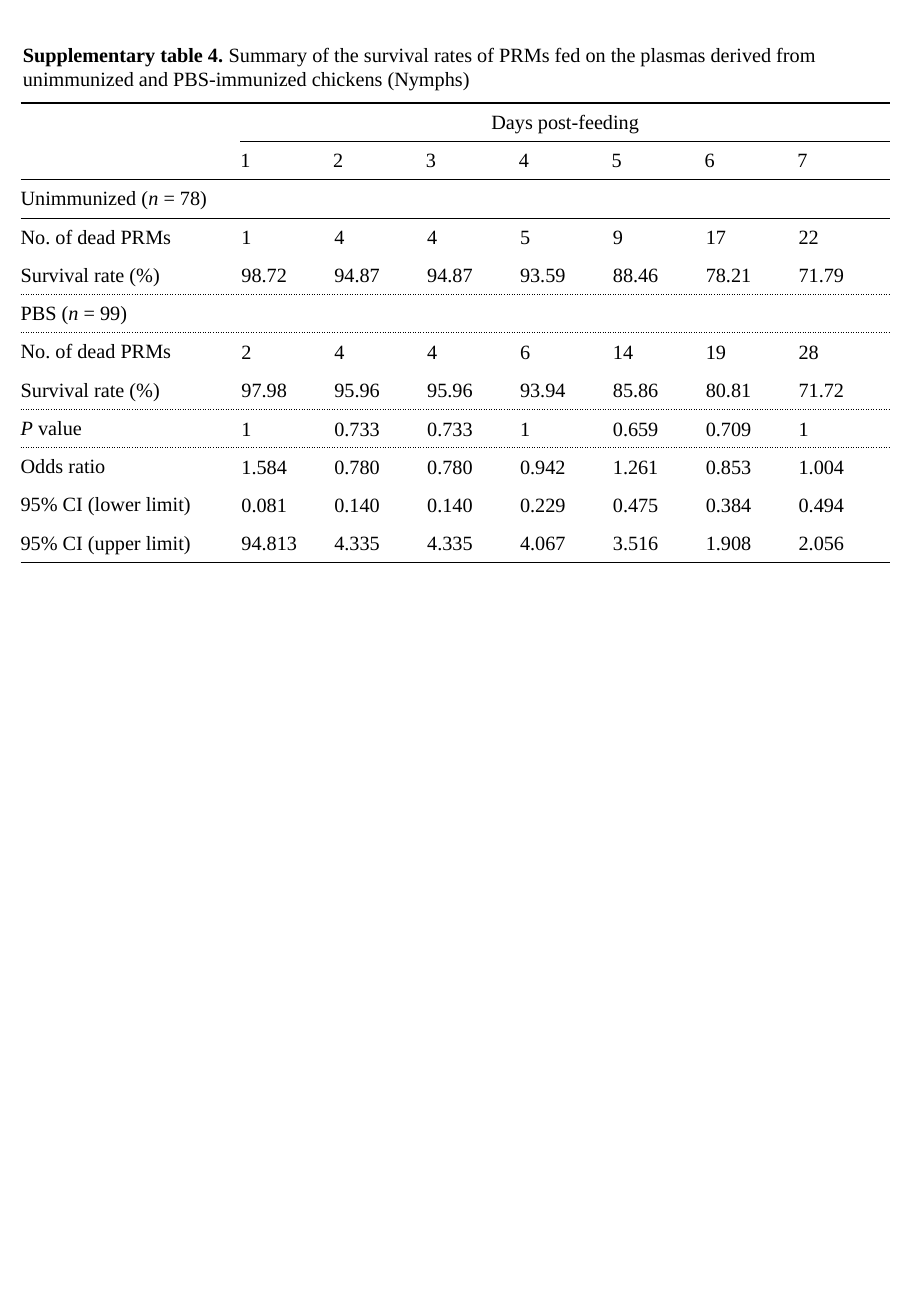
import pptx
import pptx.dml.color
import pptx.enum.text
import pptx.util
from lxml import etree
from pptx.oxml.ns import qn

W, H = 7.5, 10.83
INK = "000000"
FONT = "Times New Roman"
PLAIN_STYLE = "{2D5ABB26-0587-4C30-8999-92F81FD0307C}"  # no fill, no grid

# Each label is a list of (text, style) runs
DEAD = [("No. of dead PRMs", "")]
SURVIVAL = [("Survival rate (%)", "")]
ROWS = [
    ([], "Days post-feeding"),
    ([], "1 2 3 4 5 6 7"),
    ([("Unimmunized (", ""), ("n ", "i"), ("= 78)", "")], ""),
    (DEAD, "1 4 4 5 9 17 22"),
    (SURVIVAL, "98.72 94.87 94.87 93.59 88.46 78.21 71.79"),
    ([("PBS (", ""), ("n ", "i"), ("= 99)", "")], ""),
    (DEAD, "2 4 4 6 14 19 28"),
    (SURVIVAL, "97.98 95.96 95.96 93.94 85.86 80.81 71.72"),
    ([("P", "i"), (" value", "")], "1 0.733 0.733 1 0.659 0.709 1"),
    ([("Odds ratio", "")], "1.584 0.780 0.780 0.942 1.261 0.853 1.004"),
    ([("95% CI (lower limit)", "")], "0.081 0.140 0.140 0.229 0.475 0.384 0.494"),
    ([("95% CI (upper limit)", "")], "94.813 4.335 4.335 4.067 3.516 1.908 2.056"),
]
DAYS = 7
HEADER_ROWS = 2
GROUP_ROWS = (2, 5)
# Row edge: (first column, width in points, dash)
RULES = {0: (0, 1.5, "solid"), 1: (1, 0.75, "solid"), 2: (0, 0.75, "solid"),
         5: (0, 0.75, "sysDot"), 8: (0, 0.75, "sysDot"), 12: (0, 0.75, "solid")}


def color(value):
    return pptx.dml.color.RGBColor.from_string(value)


def write(tf, runs, align=pptx.enum.text.PP_ALIGN.LEFT):
    p = tf.paragraphs[0]
    p.alignment = align
    p.font.size = pptx.util.Pt(12)
    p.font.name = FONT
    p.font.color.rgb = color(INK)
    for text, style in runs:
        r = p.add_run()
        r.text = text
        if style == "b":
            r.font.bold = True
        elif style == "i":
            r.font.italic = True


def add_border(cell, side, position, width, dash):
    ln = etree.Element(qn("a:" + side), w=str(pptx.util.Pt(width)))
    fill = etree.SubElement(ln, qn("a:solidFill"))
    etree.SubElement(fill, qn("a:srgbClr"), val=INK)
    etree.SubElement(ln, qn("a:prstDash"), val=dash)
    cell._tc.get_or_add_tcPr().insert(position, ln)


def format_cell(cell, row, col):
    inset = 0.01 if row >= HEADER_ROWS and col else 0
    cell.margin_left = cell.margin_right = cell.margin_top = pptx.util.Inches(inset)
    cell.margin_bottom = 0
    cell.vertical_anchor = pptx.enum.text.MSO_ANCHOR.MIDDLE
    cell.fill.background()
    # Rules above and below the cell
    position = 0
    for side, edge in (("lnT", row), ("lnB", row + 1)):
        if edge in RULES and col >= RULES[edge][0]:
            add_border(cell, side, position, *RULES[edge][1:])
            position += 1


def add_caption(s, x, y, w, h):
    tf = s.shapes.add_textbox(*map(pptx.util.Inches, (x, y, w, h))).text_frame
    tf.word_wrap = True
    tf.auto_size = pptx.enum.text.MSO_AUTO_SIZE.SHAPE_TO_FIT_TEXT
    write(tf, [("Supplementary table 4. ", "b"),
               ("Summary of the survival rates of PRMs fed on the plasmas derived from "
                "unimmunized and PBS-immunized chickens (Nymphs)", "")])


def add_survival_table(s, x, y, w, h):
    frame = s.shapes.add_table(len(ROWS), DAYS + 1, *map(pptx.util.Inches, (x, y, w, h)))
    table = frame.table
    table.first_row = table.horz_banding = False
    table._tbl.tblPr.find(qn("a:tableStyleId")).text = PLAIN_STYLE

    # Label column, then equal day columns
    label_w = 0.2525 * w
    for col, column in enumerate(table.columns):
        column.width = pptx.util.Inches((w - label_w) / DAYS if col else label_w)
    for row in table.rows:
        row.height = pptx.util.Inches(h / len(ROWS))

    # Spanning cells
    table.cell(0, 1).merge(table.cell(0, DAYS))
    for row in GROUP_ROWS:
        table.cell(row, 0).merge(table.cell(row, 1))

    # Text and rules
    for row, (label, values) in enumerate(ROWS):
        texts = values.split() if row else [values]
        cells = [label] + [[(text, "")] for text in texts]
        cells += [[]] * (DAYS + 1 - len(cells))
        for col, runs in enumerate(cells):
            cell = table.cell(row, col)
            format_cell(cell, row, col)
            centred = row == 0 and col == 1
            align = pptx.enum.text.PP_ALIGN
            write(cell.text_frame, runs, align.CENTER if centred else align.LEFT)


def main():
    prs = pptx.Presentation()
    prs.slide_width, prs.slide_height = pptx.util.Inches(W), pptx.util.Inches(H)
    s = prs.slides.add_slide(prs.slide_layouts[6])
    add_survival_table(s, 0.17, 0.85, 7.16, 3.78)
    add_caption(s, 0.09, 0.3, 7.24, 0.5)
    prs.save("out.pptx")


if __name__ == "__main__":
    main()
